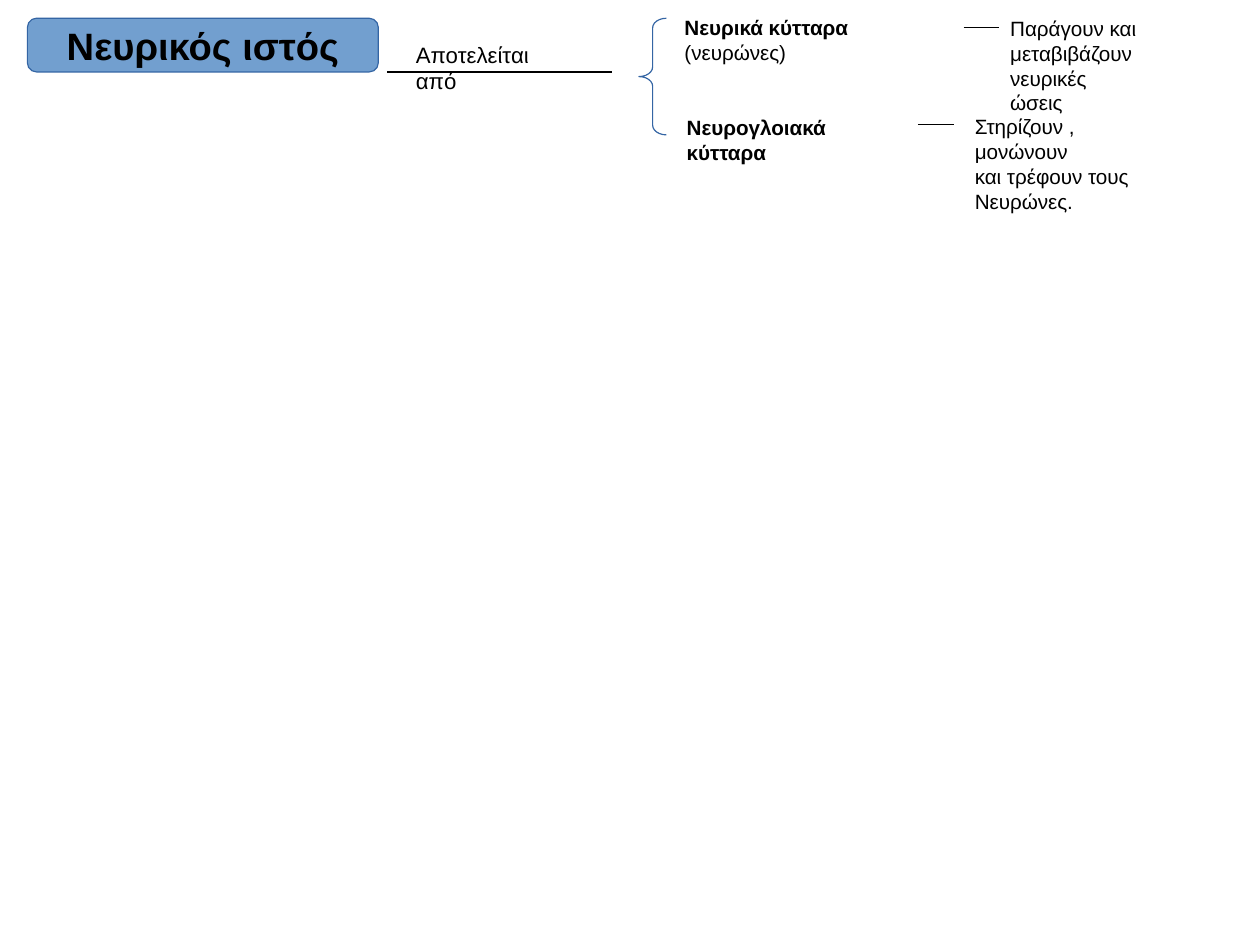
from lxml.etree import SubElement
from pptx import Presentation
from pptx.dml.color import RGBColor
from pptx.enum.shapes import MSO_CONNECTOR, MSO_SHAPE
from pptx.enum.text import MSO_ANCHOR, MSO_AUTO_SIZE, PP_ALIGN
from pptx.oxml.ns import qn
from pptx.util import Inches, Pt

COLORS = {"text": "000000", "box": "729FCF", "edge": "3465A4"}
CM_PER_INCH = 2.54
TITLE_BOX = (0.24, 0.16, 3.07, 0.47)
BRACE_BOX = (5.59, 0.16, 0.24, 1.02)
LABELS = [
    ((3.54, 0.31, 1.56, 0.32), 14, [[("Αποτελείται από", False)]]),
    ((5.89, 0.08, 2.52, 0.3), 13, [[("Νευρικά κύτταρα", True), (" (νευρώνες)", False)]]),
    ((5.91, 0.96, 2.11, 0.3), 13, [[("Νευρογλοιακά κύτταρα", True)]]),
    ((8.74, 0.09, 1.93, 0.7), 13, [[("Παράγουν και", False)],
                                   [("μεταβιβάζουν νευρικές", False)],
                                   [("ώσεις", False)]]),
    ((8.43, 0.95, 1.89, 0.7), 13, [[("Στηρίζουν , μονώνουν", False)],
                                   [("και τρέφουν τους", False)],
                                   [("Νευρώνες.", False)]]),
]
LINKS = [(3.39, 5.35, 0.63), (8.43, 8.74, 0.24), (8.03, 8.35, 1.09)]


def inches(box):
    """Turn a tuple of numbers into lengths."""
    return [Inches(v) for v in box]


def set_line(line, color):
    """Give an outline its colour and thin width."""
    line.color.rgb = RGBColor.from_string(COLORS[color])
    line.width = Pt(0.75)


def write(tf, size, paragraphs, **frame_format):
    """Format a text frame and fill it with paragraphs of (text, bold) runs."""
    margins = {"margin_left": Inches(0.1), "margin_right": Inches(0.1),
               "margin_top": Inches(0.05), "margin_bottom": Inches(0.05)}
    for name, value in {**margins, **frame_format}.items():
        setattr(tf, name, value)
    for i, runs in enumerate(paragraphs):
        p = tf.add_paragraph() if i else tf.paragraphs[0]
        for text, bold in runs:
            r = p.add_run()
            r.text = text
            for name, value in {"name": "Arial", "size": Pt(size), "bold": bold}.items():
                setattr(r.font, name, value)
            r.font.color.rgb = RGBColor.from_string(COLORS["text"])


def add_preset(s, kind, box, adjustment, fill=None):
    """Add an outlined preset shape, filled when a colour is named."""
    sp = s.shapes.add_shape(kind, *inches(box))
    sp.shadow.inherit = False
    sp.adjustments[0] = adjustment
    set_line(sp.line, "edge")
    if fill:
        sp.fill.solid()
        sp.fill.fore_color.rgb = RGBColor.from_string(COLORS[fill])
    else:
        sp.fill.background()


def add_title(s, box, text):
    """Place the title in front of its rounded box."""
    add_preset(s, MSO_SHAPE.ROUNDED_RECTANGLE, box, 0.17, "box")
    title = s.shapes.title
    title.left, title.top, title.width, title.height = inches(box)
    write(title.text_frame, 24, [[(text, True)]], word_wrap=False,
          auto_size=MSO_AUTO_SIZE.NONE, vertical_anchor=MSO_ANCHOR.MIDDLE)
    title.text_frame.paragraphs[0].alignment = PP_ALIGN.CENTER
    s.shapes._spTree.append(title._element)


def add_label(s, box, size, paragraphs):
    """Add a wrapping text box."""
    tf = s.shapes.add_textbox(*inches(box)).text_frame
    write(tf, size, paragraphs, word_wrap=True)


def add_link(s, x1, x2, y):
    """Add a horizontal connecting line."""
    link = s.shapes.add_connector(MSO_CONNECTOR.STRAIGHT, *inches((x1, y, x2, y)))
    set_line(link.line, "text")
    SubElement(link._element.spPr, qn("a:effectLst"))


def main():
    """Build the nervous tissue diagram."""
    prs = Presentation()
    prs.slide_width = Inches(28 / CM_PER_INCH)
    prs.slide_height = Inches(21 / CM_PER_INCH)
    s = prs.slides.add_slide(prs.slide_layouts[5])
    add_title(s, TITLE_BOX, "Νευρικός ιστός")
    add_preset(s, MSO_SHAPE.LEFT_BRACE, BRACE_BOX, 0.35)
    for link in LINKS:
        add_link(s, *link)
    for label in LABELS:
        add_label(s, *label)
    prs.save("out.pptx")


if __name__ == "__main__":
    main()
